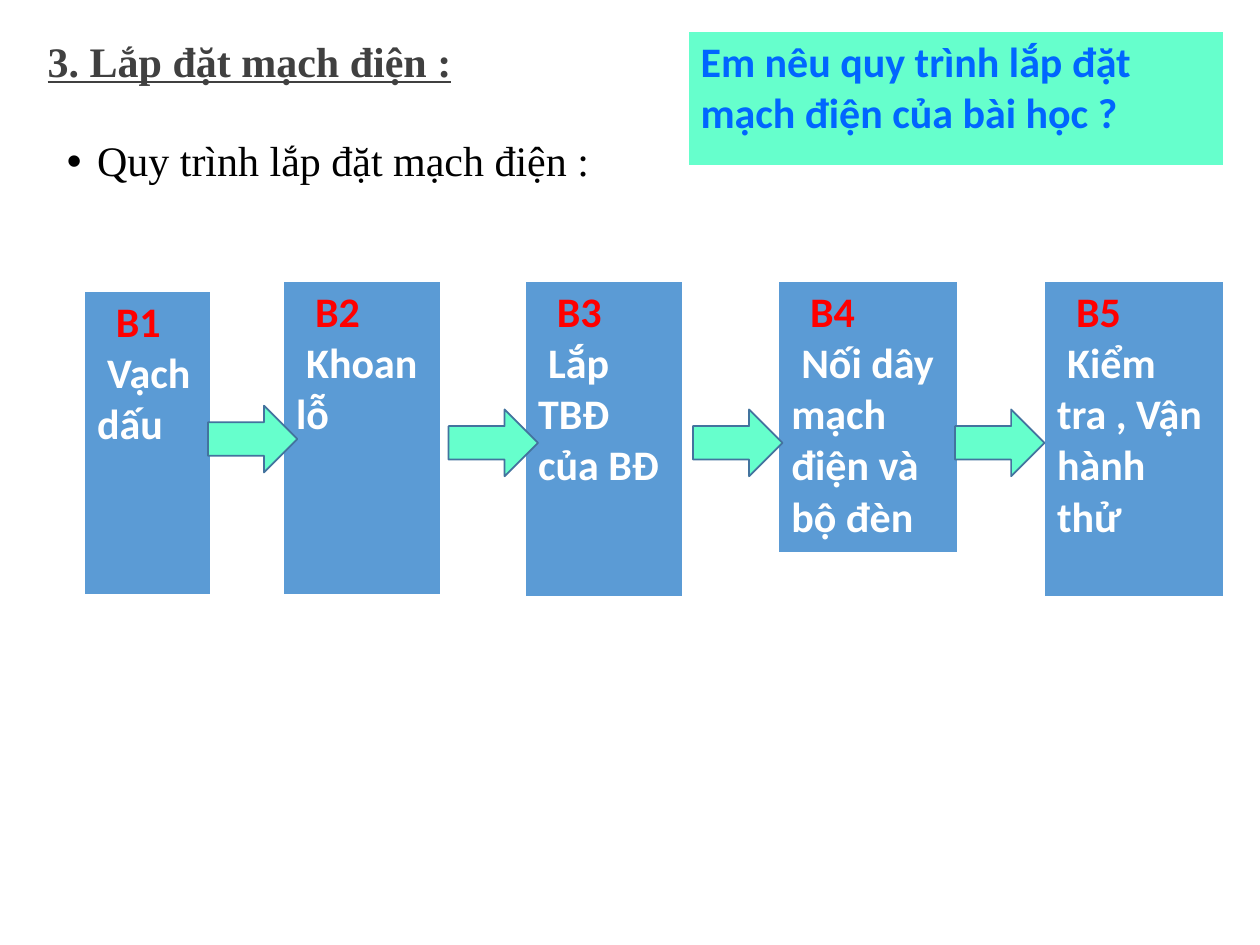
from dataclasses import dataclass

from lxml import etree
from pptx import Presentation
from pptx.dml.color import RGBColor
from pptx.enum.shapes import MSO_SHAPE
from pptx.enum.text import MSO_ANCHOR, MSO_AUTO_SIZE, PP_ALIGN
from pptx.oxml.ns import qn
from pptx.util import Inches, Pt

ARROW = MSO_SHAPE.RIGHT_ARROW
LEFT = PP_ALIGN.LEFT
MIDDLE, BOTTOM = MSO_ANCHOR.MIDDLE, MSO_ANCHOR.BOTTOM
NO_FIT = MSO_AUTO_SIZE.NONE


@dataclass(frozen=True)
class Theme:
    sans: str = "Calibri"
    serif: str = "Times New Roman"
    size: int = 24
    black: str = "000000"
    gray: str = "404040"
    white: str = "FFFFFF"
    red: str = "FF0000"
    ask: str = "0066FF"
    mint: str = "66FFCC"
    blue: str = "5B9BD5"
    edge: str = "43739E"


THEME = Theme()

# left, top, width, height, label, task
STEPS = [
    (0.67, 2.31, 1, 2.42, "B1", "Vạch dấu"),
    (2.25, 2.23, 1.25, 2.5, "B2", "Khoan lỗ"),
    (4.17, 2.23, 1.25, 2.52, "B3", "Lắp TBĐ của BĐ"),
    (6.18, 2.23, 1.42, 2.17, "B4", "Nối dây mạch điện và bộ đèn"),
    (8.29, 2.23, 1.42, 2.52, "B5", "Kiểm tra , Vận hành thử"),
]
ARROWS = [(1.65, 3.22), (3.56, 3.25), (5.5, 3.25), (7.58, 3.25)]


def box(*sides):
    return [Inches(side) for side in sides]


def color(code):
    return RGBColor.from_string(code)


def write(para, text, font=THEME.sans, ink=THEME.white, bold=True,
          line=False, margin=0, indent=0, bullet=None):
    """Fill a paragraph; margin and indent are in inches."""
    props = para._p.get_or_add_pPr()
    props.set("marL", str(Inches(margin)))
    props.set("indent", str(Inches(indent)))
    if bullet:
        etree.SubElement(props, qn("a:buFont")).set("typeface", "Arial")
        etree.SubElement(props, qn("a:buChar")).set("char", bullet)
    para.alignment = LEFT
    run = para.add_run()
    run.text = text
    run.font.name = font
    run.font.size = Pt(THEME.size)
    run.font.bold = bold
    run.font.underline = line
    run.font.color.rgb = color(ink)


def add_title(slide, text):
    title = slide.shapes.title
    title.left, title.top, title.width, title.height = box(0.43, 0.96, 4.42, 0.67)
    frame = title.text_frame
    frame.auto_size = NO_FIT
    frame.vertical_anchor = MIDDLE
    para = frame.paragraphs[0]
    write(para, text, font=THEME.serif, ink=THEME.black, bold=False,
          margin=0.24, indent=-0.24, bullet="•")
    para.line_spacing = 0.9


def add_head(slide, text):
    frame = slide.shapes.add_textbox(*box(0.28, 0.11, 4.15, 0.62)).text_frame
    frame.word_wrap = True
    frame.vertical_anchor = BOTTOM
    write(frame.paragraphs[0], text, font=THEME.serif, ink=THEME.gray, line=True)


def add_edges(cell):
    """Draw white cell borders, the bottom one thicker."""
    props = cell._tc.get_or_add_tcPr()
    for spot, (side, width) in enumerate(
            [("lnL", 1), ("lnR", 1), ("lnT", 1), ("lnB", 3)]):
        edge = etree.Element(qn(f"a:{side}"), w=str(Pt(width)))
        fill = etree.SubElement(edge, qn("a:solidFill"))
        etree.SubElement(fill, qn("a:srgbClr")).set("val", THEME.white)
        props.insert(spot, edge)


def add_card(slide, place, fill):
    """Add a one-cell table and return its text frame."""
    table = slide.shapes.add_table(1, 1, *box(*place)).table
    table.first_row = table.horz_banding = False
    cell = table.cell(0, 0)
    cell.fill.solid()
    cell.fill.fore_color.rgb = color(fill)
    add_edges(cell)
    return cell.text_frame


def add_step(slide, *place, label, task):
    frame = add_card(slide, place, THEME.blue)
    write(frame.paragraphs[0], label, ink=THEME.red, indent=0.15)
    write(frame.add_paragraph(), task, indent=0.08)


def add_arrow(slide, left, top):
    arrow = slide.shapes.add_shape(ARROW, *box(left, top, 0.71, 0.53))
    arrow.shadow.inherit = False
    arrow.fill.solid()
    arrow.fill.fore_color.rgb = color(THEME.mint)
    arrow.line.color.rgb = color(THEME.edge)
    arrow.line.width = Pt(1)


def main():
    deck = Presentation()
    deck.slide_width, deck.slide_height = box(10, 7.5)
    slide = deck.slides.add_slide(deck.slide_layouts.get_by_name("Title Only"))
    add_title(slide, "Quy trình lắp đặt mạch điện :")
    add_head(slide, "3. Lắp đặt mạch điện :")
    ask = add_card(slide, (5.46, 0.25, 4.25, 1.08), THEME.mint)
    write(ask.paragraphs[0], "Em nêu quy trình lắp đặt mạch điện của bài học ?",
          ink=THEME.ask)
    for *place, label, task in STEPS:
        add_step(slide, *place, label=label, task=task)
    for left, top in ARROWS:
        add_arrow(slide, left, top)
    deck.save("out.pptx")


if __name__ == "__main__":
    main()
